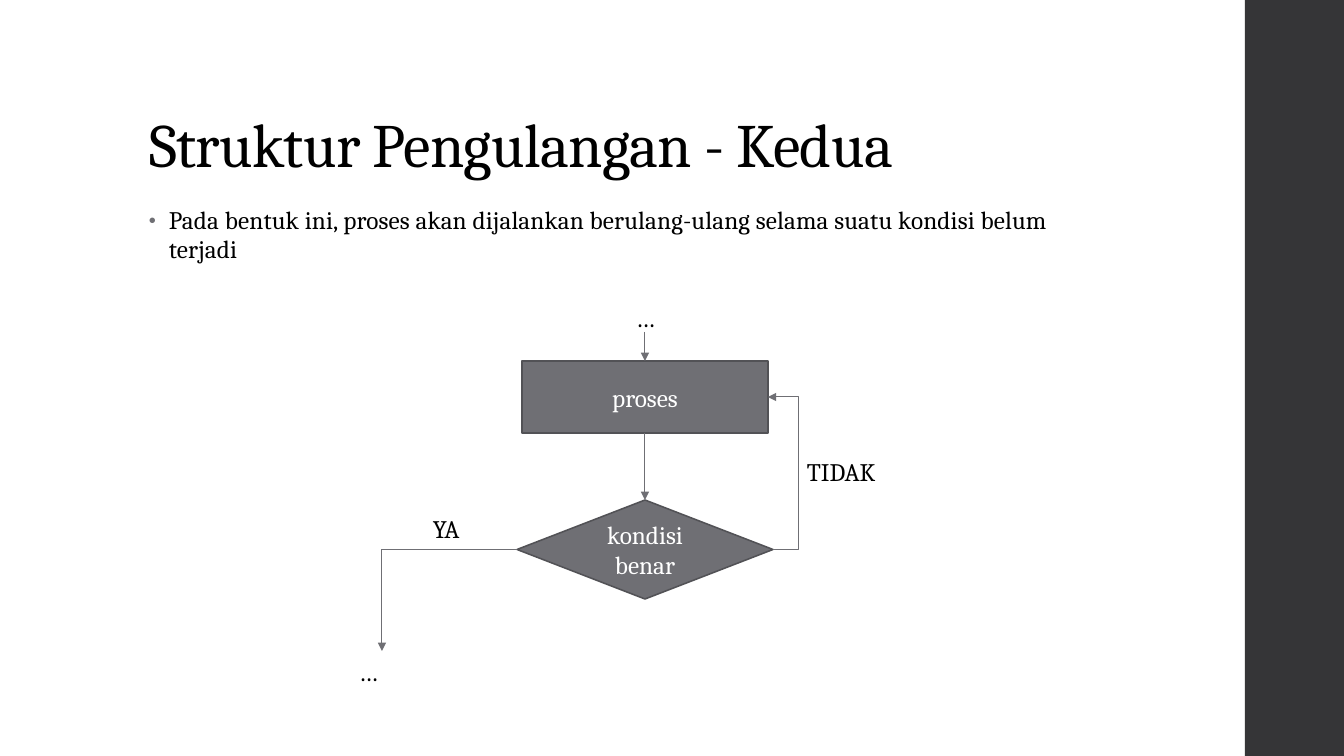
from dataclasses import dataclass

from lxml.etree import SubElement
from pptx import Presentation
from pptx.dml.color import RGBColor
from pptx.enum.shapes import MSO_CONNECTOR as Link, MSO_SHAPE as Preset
from pptx.enum.text import MSO_ANCHOR as Anchor, MSO_AUTO_SIZE as AutoSize, PP_ALIGN as Align
from pptx.oxml.ns import qn
from pptx.util import Emu, Pt

SLIDE_WIDTH, SLIDE_HEIGHT = 1344, 756
EMU_PER_PX = 12192000 / SLIDE_WIDTH
TOP, LEFT, BOTTOM, RIGHT = 0, 1, 2, 3


@dataclass(frozen=True)
class Theme:
    font: str = "Cambria"
    text: str = "000000"
    inverse: str = "FFFFFF"
    sidebar: str = "353537"
    accent: str = "6F6F74"
    outline: str = "525256"
    title_size: int = 44
    body_size: int = 18
    outline_width: float = 1.1
    arrow_width: float = 0.75


def px(length):
    return Emu(round(length * EMU_PER_PX))


def rgb(value):
    return RGBColor.from_string(value)


def add_xml(parent, tag, **attributes):
    return SubElement(parent, qn(tag), attributes)


class FlowSlide:
    def __init__(self, presentation, theme):
        self.theme = theme
        self.slide = presentation.slides.add_slide(presentation.slide_layouts[5])
        self.shapes = self.slide.shapes

    def set_text(self, shape, text, size=None, color=None, spacing=0, anchor=Anchor.TOP,
                 **formats):
        """Fill a shape with one paragraph; formats are paragraph attributes."""
        frame = shape.text_frame
        frame.word_wrap = True
        frame.auto_size = AutoSize.NONE
        frame.vertical_anchor = anchor
        paragraph = frame.paragraphs[0]
        for name, value in formats.items():
            setattr(paragraph, name, value)
        run = paragraph.add_run()
        run.text = text
        run.font.name = self.theme.font
        run.font.size = Pt(size or self.theme.body_size)
        run.font.color.rgb = rgb(color or self.theme.text)
        if spacing:
            run._r.get_or_add_rPr().set("spc", str(spacing))
        return paragraph

    def title(self, text, left, top, width, height):
        title = self.shapes.title
        box = {"left": left, "top": top, "width": width, "height": height}
        for name, value in box.items():
            setattr(title, name, px(value))
        self.set_text(title, text, self.theme.title_size, spacing=-50, anchor=Anchor.BOTTOM,
                      alignment=Align.LEFT, line_spacing=0.9)

    def label(self, text, left, top, width, height=40, **formats):
        box = self.shapes.add_textbox(*map(px, (left, top, width, height)))
        return self.set_text(box, text, **formats)

    def bullet(self, text, left, top, width, height):
        paragraph = self.label(text, left, top, width, height, spacing=10, line_spacing=0.95,
                               space_before=Pt(14), space_after=Pt(2))
        properties = paragraph._p.get_or_add_pPr()
        properties.set("marL", str(px(20)))
        properties.set("indent", str(px(-20)))
        color = add_xml(properties, "a:buClr")
        add_xml(color, "a:srgbClr", val=self.theme.accent)
        add_xml(properties, "a:buSzPct", val="80000")
        add_xml(properties, "a:buFont", typeface="Arial")
        add_xml(properties, "a:buChar", char="•")

    def block(self, preset, left, top, width, height, fill, outline=None):
        shape = self.shapes.add_shape(preset, *map(px, (left, top, width, height)))
        shape.shadow.inherit = False
        shape.fill.solid()
        shape.fill.fore_color.rgb = rgb(fill)
        if outline:
            shape.line.color.rgb = rgb(outline)
            shape.line.width = Pt(self.theme.outline_width)
        else:
            shape.line.fill.background()
        return shape

    def node(self, preset, text, *box):
        shape = self.block(preset, *box, self.theme.accent, self.theme.outline)
        self.set_text(shape, text, color=self.theme.inverse, anchor=Anchor.MIDDLE,
                      alignment=Align.CENTER)
        return shape

    def arrow(self, start, end, kind=Link.STRAIGHT, source=None, target=None):
        """Draw an arrow; source and target are (shape, side) pairs to join."""
        arrow = self.shapes.add_connector(kind, *map(px, (*start, *end)))
        if source:
            arrow.begin_connect(*source)
        if target:
            arrow.end_connect(*target)
        arrow.line.color.rgb = rgb(self.theme.accent)
        arrow.line.width = Pt(self.theme.arrow_width)
        properties = arrow._element.spPr
        add_xml(properties.find(qn("a:ln")), "a:tailEnd", type="triangle")
        add_xml(properties, "a:effectLst")
        return arrow

    def loop_arrow(self, start, end, turn, **joins):
        """Elbow arrow whose upright part stands at x = turn."""
        arrow = self.arrow(start, end, Link.ELBOW, **joins)
        ratio = (turn - start[0]) / (end[0] - start[0])
        guides = arrow._element.spPr.prstGeom.get_or_add_avLst()
        add_xml(guides, "a:gd", name="adj1", fmla=f"val {round(ratio * 100000)}")

    def corner_arrow(self, start, end, **joins):
        """Elbow arrow with one turn: across, then down."""
        arrow = self.arrow(start, end, Link.ELBOW, **joins)
        arrow._element.spPr.prstGeom.set("prst", "bentConnector2")


def main():
    presentation = Presentation()
    presentation.slide_width = px(SLIDE_WIDTH)
    presentation.slide_height = px(SLIDE_HEIGHT)
    theme = Theme()
    flow = FlowSlide(presentation, theme)

    flow.block(Preset.RECTANGLE, 1245, 0, 99, SLIDE_HEIGHT, theme.sidebar)
    flow.title("Struktur Pengulangan - Kedua", 139, 40, 1068, 146)
    flow.bullet("Pada bentuk ini, proses akan dijalankan berulang-ulang selama suatu kondisi "
                "belum terjadi", 139, 202, 948, 130)

    condition = flow.node(Preset.DIAMOND, "kondisi benar", 517, 500, 256, 99)
    process = flow.node(Preset.RECTANGLE, "proses", 522, 361, 246, 72)

    flow.loop_arrow((773, 549), (768, 397), 799,
                    source=(condition, RIGHT), target=(process, RIGHT))
    flow.corner_arrow((517, 549), (382, 651), source=(condition, LEFT))
    flow.arrow((645, 332), (645, 361), target=(process, TOP))
    flow.arrow((645, 433), (645, 500), source=(process, BOTTOM), target=(condition, TOP))

    for text, left, top, width in (("…", 349, 651, 67), ("…", 626, 297, 67),
                                   ("TIDAK", 797, 451, 135), ("YA", 423, 508, 82)):
        flow.label(text, left, top, width)

    presentation.save("out.pptx")


if __name__ == "__main__":
    main()
